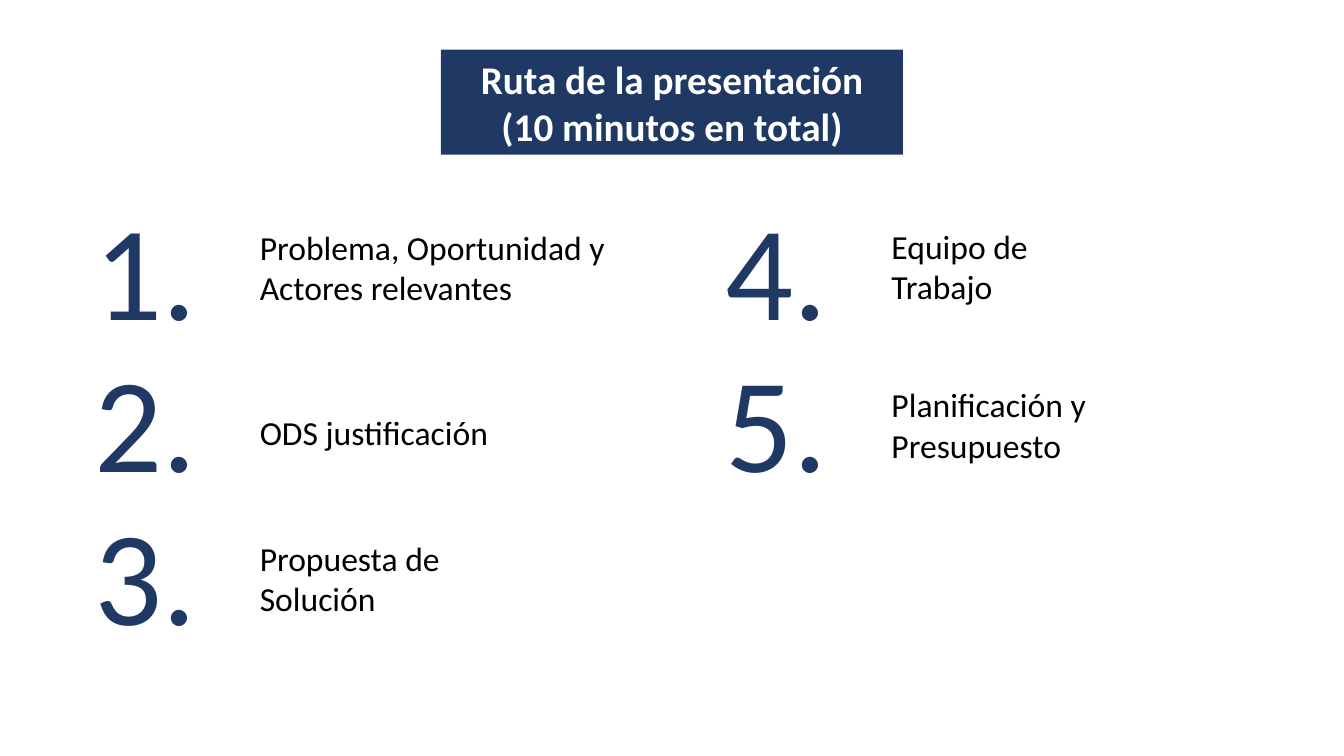
from dataclasses import dataclass

from pptx import Presentation
from pptx.dml.color import RGBColor as RGB
from pptx.enum.shapes import MSO_SHAPE as Shape
from pptx.enum.text import PP_ALIGN as Align
from pptx.util import Pt


@dataclass(frozen=True)
class Theme:
    font: str = "Calibri"
    navy: RGB = RGB(0x20, 0x38, 0x64)
    black: RGB = RGB(0, 0, 0)
    white: RGB = RGB(255, 255, 255)
    title_size: int = 28
    number_size: int = 96
    label_size: int = 24


class Deck:
    def __init__(self, prs, theme):
        self.theme = theme
        self.s = prs.slides.add_slide(prs.slide_layouts[6])

    def set_text(self, sp, text, size, color, align=Align.LEFT, bold=False):
        tf = sp.text_frame
        tf.word_wrap = True
        tf.text = text
        for p in tf.paragraphs:
            p.alignment = align
            for r in p.runs:
                r.font.name = self.theme.font
                r.font.size = Pt(size)
                r.font.bold = bold
                r.font.color.rgb = color

    def banner(self, text, x, y, w, h):
        t = self.theme
        sp = self.s.shapes.add_shape(Shape.RECTANGLE, Pt(x), Pt(y), Pt(w), Pt(h))
        sp.shadow.inherit = False
        sp.fill.solid()
        sp.fill.fore_color.rgb = t.navy
        sp.line.fill.background()
        self.set_text(sp, text, t.title_size, t.white, Align.CENTER, True)

    def number(self, n, x, y):
        t = self.theme
        sp = self.s.shapes.add_textbox(Pt(x), Pt(y), Pt(216), Pt(124))
        self.set_text(sp, f"{n}. ", t.number_size, t.navy, Align.CENTER)

    def label(self, text, x, y, w, h):
        t = self.theme
        sp = self.s.shapes.add_textbox(Pt(x), Pt(y), Pt(w), Pt(h))
        self.set_text(sp, text, t.label_size, t.black)


def main():
    prs = Presentation()
    prs.slide_width, prs.slide_height = Pt(960), Pt(540)
    deck = Deck(prs, Theme())
    deck.banner("Ruta de la presentación (10 minutos en total)", 315, 35.5, 330, 75)

    columns = [
        (6.8, 178.5, [
            ("Problema, Oportunidad y Actores relevantes", 158.4, 290, 65.4),
            ("ODS justificación", 290.9, 302, 36),
            ("Propuesta de\nSolución", 380.4, 269, 65.4),
        ]),
        (457.5, 629.7, [
            ("Equipo de\nTrabajo", 157.7, 290, 65.4),
            ("Planificación y\nPresupuesto", 270.9, 245, 65.4),
        ]),
    ]
    top, pitch = 129.2, 109
    n = 0
    for number_x, label_x, topics in columns:
        for row, (text, y, w, h) in enumerate(topics):
            n += 1
            deck.number(n, number_x, top + row * pitch)
            deck.label(text, label_x, y, w, h)

    prs.save("out.pptx")


if __name__ == "__main__":
    main()
